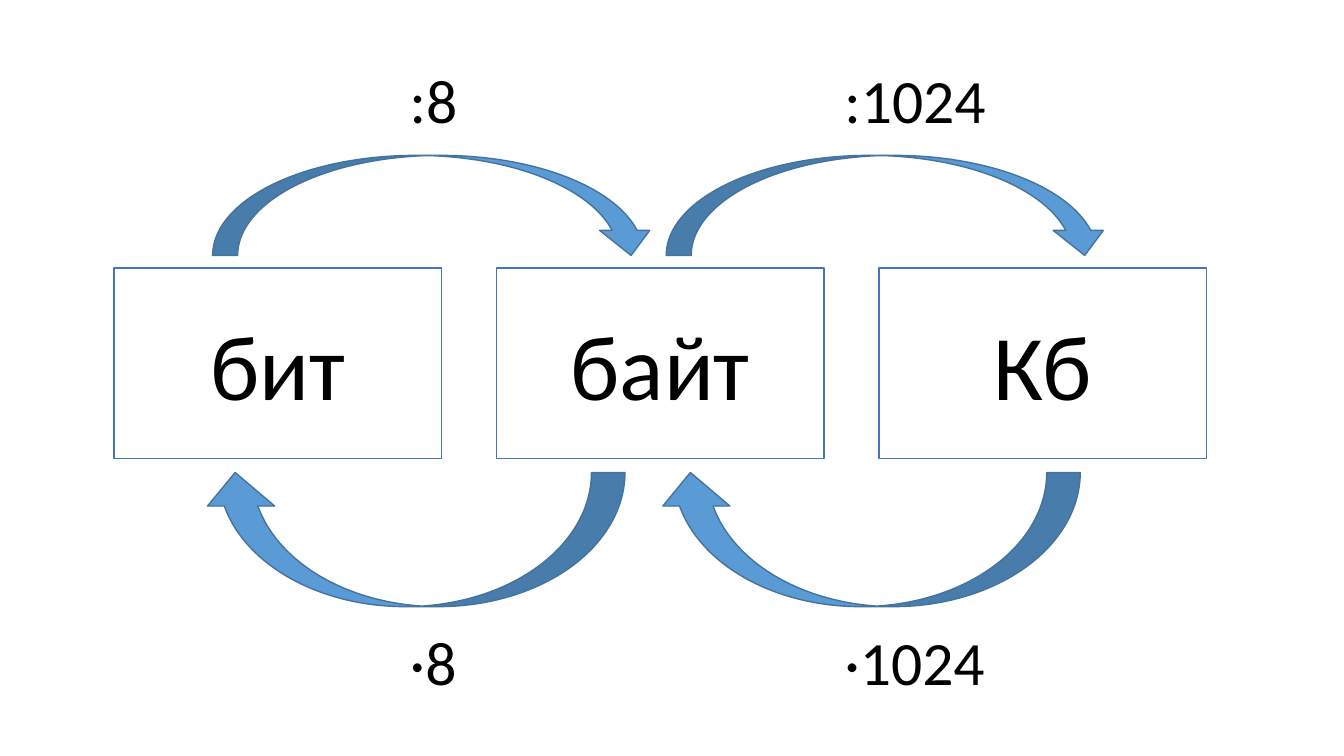
from pptx import Presentation
from pptx.dml.color import RGBColor
from pptx.enum.shapes import MSO_SHAPE
from pptx.enum.text import MSO_ANCHOR, MSO_AUTO_SIZE, PP_ALIGN
from pptx.util import Pt

COLORS = {
    "paper": "FFFFFF",
    "ink": "000000",
    "unit_border": "4472C4",
    "arrow": "5B9BD5",
    "arrow_border": "43739E",
}

UNITS = ["бит", "байт", "Кб"]
FACTORS = ["8", "1024"]

# Column positions: left edge of the first item and step to the next
UNIT_LEFT, UNIT_STEP = 81.4, 273.2
DIVIDE_LEFT, DIVIDE_STEP = 151.9, 324
MULTIPLY_LEFT, MULTIPLY_STEP = 144, 325.2
FACTOR_LEFT, FACTOR_STEP = 285.6, 310.5
FACTOR_WIDTHS = [49, 116]


def color(name):
    return RGBColor.from_string(COLORS[name])


def write(frame, text, size, align=PP_ALIGN.LEFT, anchor=MSO_ANCHOR.TOP,
          wrap=True, auto_size=MSO_AUTO_SIZE.NONE):
    frame.word_wrap = wrap
    frame.auto_size = auto_size
    frame.vertical_anchor = anchor
    paragraph = frame.paragraphs[0]
    paragraph.alignment = align
    run = paragraph.add_run()
    run.text = text
    run.font.name = "Calibri"
    run.font.size = Pt(size)
    run.font.color.rgb = color("ink")


def add_outlined(slide, preset, left, top, width, height, fill, border):
    outlined = slide.shapes.add_shape(
        preset, Pt(left), Pt(top), Pt(width), Pt(height))
    outlined.shadow.inherit = False
    outlined.fill.solid()
    outlined.fill.fore_color.rgb = color(fill)
    outlined.line.color.rgb = color(border)
    outlined.line.width = Pt(1)
    return outlined


def add_unit(slide, name, left):
    unit = add_outlined(slide, MSO_SHAPE.RECTANGLE, left, 191.5, 234, 136,
                        "paper", "unit_border")
    write(unit.text_frame, name, 66, align=PP_ALIGN.CENTER,
          anchor=MSO_ANCHOR.MIDDLE)


def add_arrow(slide, left, top, width, height, rotation=0):
    arrow = add_outlined(slide, MSO_SHAPE.CURVED_DOWN_ARROW, left, top,
                         width, height, "arrow", "arrow_border")
    arrow.rotation = rotation


def add_factor(slide, text, left, top, width):
    factor = slide.shapes.add_textbox(Pt(left), Pt(top), Pt(width), Pt(60.6))
    write(factor.text_frame, text, 44, wrap=False,
          auto_size=MSO_AUTO_SIZE.SHAPE_TO_FIT_TEXT)


def main():
    deck = Presentation()
    deck.slide_width, deck.slide_height = Pt(960), Pt(540)
    slide = deck.slides.add_slide(deck.slide_layouts[6])

    # Units of information
    for column, name in enumerate(UNITS):
        add_unit(slide, name, UNIT_LEFT + column * UNIT_STEP)

    # Division arrows above, multiplication arrows below
    for column in range(len(FACTORS)):
        add_arrow(slide, DIVIDE_LEFT + column * DIVIDE_STEP,
                  111, 316.8, 71.5)
        add_arrow(slide, MULTIPLY_LEFT + column * MULTIPLY_STEP,
                  337.5, 302.4, 95.8, rotation=180)

    # Conversion factors
    for column, (factor, width) in enumerate(zip(FACTORS, FACTOR_WIDTHS)):
        left = FACTOR_LEFT + column * FACTOR_STEP
        for sign, top in ((":", 41), ("·", 442)):
            add_factor(slide, sign + factor, left, top, width)

    deck.save("out.pptx")


if __name__ == "__main__":
    main()
